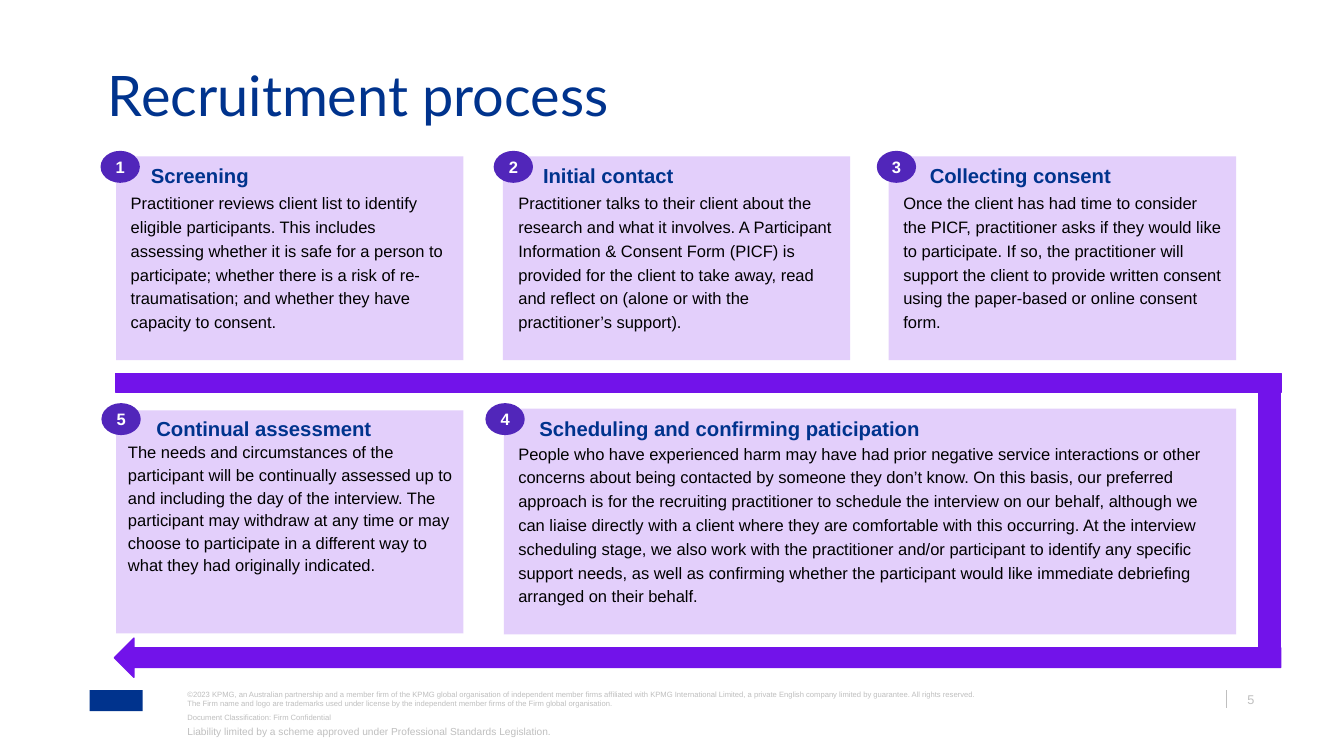
from dataclasses import dataclass

from pptx import Presentation
from pptx.dml.color import RGBColor
from pptx.enum.shapes import MSO_CONNECTOR, MSO_SHAPE
from pptx.enum.text import MSO_ANCHOR, PP_ALIGN
from pptx.oxml.ns import qn
from pptx.util import Inches, Pt
from lxml.etree import SubElement


@dataclass(frozen=True)
class Theme:
    navy: str = "00338D"
    lilac: str = "E3CFFB"
    badge: str = "5126BA"
    arrow: str = "7213EA"
    grey: str = "BFBFBF"
    black: str = "000000"
    white: str = "FFFFFF"
    font: str = "Arial"
    display: str = "Lato"
    title: int = 44
    head: int = 16
    body: int = 13
    page: int = 10
    note: int = 8
    legal: int = 6


@dataclass(frozen=True)
class Card:
    step: str
    head: str
    body: str
    panel: tuple
    badge: tuple
    indent: float
    area: tuple
    leading: float = 1.2


THEME = Theme()
PAD = (0.11, 0.06)

CARDS = [
    Card("2", "Initial contact",
         "Practitioner talks to their client about the research and what it "
         "involves. A Participant Information & Consent Form (PICF) is provided "
         "for the client to take away, read and reflect on (alone or with the "
         "practitioner’s support).",
         (5.5, 1.71, 3.8, 2.23), (5.4, 1.65), 5.83, (5.56, 2.01, 3.72, 1.92)),
    Card("1", "Screening",
         "Practitioner reviews client list to identify eligible participants. "
         "This includes assessing whether it is safe for a person to "
         "participate; whether there is a risk of re-traumatisation; and "
         "whether they have capacity to consent.",
         (1.27, 1.71, 3.8, 2.23), (1.1, 1.65), 1.54, (1.32, 2.01, 3.72, 1.92)),
    Card("3", "Collecting consent",
         "Once the client has had time to consider the PICF, practitioner asks "
         "if they would like to participate. If so, the practitioner will "
         "support the client to provide written consent using the paper-based "
         "or online consent form.",
         (9.72, 1.71, 3.8, 2.23), (9.59, 1.65), 10.06, (9.77, 2.01, 3.72, 1.92)),
    Card("5", "Continual assessment",
         "The needs and circumstances of the participant will be continually "
         "assessed up to and including the day of the interview. The "
         "participant may withdraw at any time or may choose to participate in "
         "a different way to what they had originally indicated.",
         (1.27, 4.49, 3.8, 2.44), (1.11, 4.41), 1.6, (1.29, 4.75, 3.78, 2.09),
         1.14),
    Card("4", "Scheduling and confirming paticipation",
         "People who have experienced harm may have had prior negative service "
         "interactions or other concerns about being contacted by someone they "
         "don’t know. On this basis, our preferred approach is for the "
         "recruiting practitioner to schedule the interview on our behalf, "
         "although we can liaise directly with a client where they are "
         "comfortable with this occurring. At the interview scheduling stage, "
         "we also work with the practitioner and/or participant to identify "
         "any specific support needs, as well as confirming whether the "
         "participant would like immediate debriefing arranged on their behalf.",
         (5.51, 4.47, 8.01, 2.47), (5.31, 4.41), 5.79, (5.56, 4.75, 7.96, 2.19)),
]

LEGAL = [
    "©2023 KPMG, an Australian partnership and a member firm of the KPMG global "
    "organisation of independent member firms affiliated with KPMG International "
    "Limited, a private English company limited by guarantee. All rights reserved.",
    "The Firm name and logo are trademarks used under license by the independent "
    "member firms of the Firm global organisation.",
]


def tint(code):
    return RGBColor.from_string(code)


def fill_text(frame, lines, size, color, font=THEME.font, bold=False,
              align=PP_ALIGN.LEFT, leading=None, pad=(0, 0), wrap=True,
              anchor=MSO_ANCHOR.TOP):
    frame.word_wrap = wrap
    frame.vertical_anchor = anchor
    frame.margin_left = frame.margin_right = Inches(pad[0])
    frame.margin_top = frame.margin_bottom = Inches(pad[1])
    for index, line in enumerate(lines):
        para = frame.add_paragraph() if index else frame.paragraphs[0]
        para.alignment = align
        if leading:
            para.line_spacing = leading
        run = para.add_run()
        run.text = line
        run.font.name = font
        run.font.size = Pt(size)
        run.font.bold = bold
        run.font.color.rgb = tint(color)


def add_text(slide, box, lines, size, color, **style):
    label = slide.shapes.add_textbox(*map(Inches, box))
    fill_text(label.text_frame, lines, size, color, **style)


def add_block(slide, kind, box, color, edge=False):
    block = slide.shapes.add_shape(kind, *map(Inches, box))
    block.shadow.inherit = False
    block.fill.solid()
    block.fill.fore_color.rgb = tint(color)
    if edge:
        block.line.color.rgb = tint(color)
        block.line.width = Pt(1)
    else:
        block.line.fill.background()
    return block


def add_rule(slide, left, top, bottom):
    ends = map(Inches, (left, top, left, bottom))
    rule = slide.shapes.add_connector(MSO_CONNECTOR.STRAIGHT, *ends)
    rule.line.color.rgb = tint(THEME.grey)
    rule.line.width = Pt(0.5)
    SubElement(rule._element.spPr, qn("a:effectLst"))


def add_card(slide, card):
    add_block(slide, MSO_SHAPE.RECTANGLE, card.panel, THEME.lilac)
    left, top = card.badge
    badge = add_block(slide, MSO_SHAPE.OVAL, (left, top, 0.43, 0.35), THEME.badge)
    fill_text(badge.text_frame, [card.step], THEME.body, THEME.white, bold=True,
              align=PP_ALIGN.CENTER, anchor=MSO_ANCHOR.MIDDLE)
    width = card.panel[0] + card.panel[2] - card.indent
    add_text(slide, (card.indent, top + 0.08, width, 0.38), [card.head],
             THEME.head, THEME.navy, bold=True, pad=PAD)
    add_text(slide, card.area, [card.body], THEME.body, THEME.black,
             leading=card.leading, pad=PAD)


def add_route(slide):
    parts = [
        (MSO_SHAPE.RECTANGLE, (1.26, 4.09, 12.76, 0.2)),
        (MSO_SHAPE.RECTANGLE, (13.77, 4.09, 0.24, 3.08)),
        (MSO_SHAPE.LEFT_ARROW, (1.25, 6.98, 12.76, 0.43)),
    ]
    for kind, box in parts:
        add_block(slide, kind, box, THEME.arrow, edge=True)


def add_footer(slide):
    add_block(slide, MSO_SHAPE.RECTANGLE, (0.98, 7.55, 0.58, 0.23), THEME.navy)
    add_rule(slide, 13.41, 7.55, 7.74)
    add_text(slide, (13.43, 7.55, 0.29, 0.18), ["5"], THEME.page, THEME.grey,
             align=PP_ALIGN.RIGHT, anchor=MSO_ANCHOR.BOTTOM)
    add_text(slide, (2.05, 7.55, 10.12, 0.2), LEGAL, THEME.legal, THEME.grey)
    add_text(slide, (2.05, 7.8, 7.45, 0.09),
             ["Document Classification: Firm Confidential"],
             THEME.legal, THEME.grey)
    add_text(slide, (2.05, 7.93, 4.06, 0.13),
             ["Liability limited by a scheme approved under Professional "
              "Standards Legislation."], THEME.note, THEME.grey, wrap=False)


def main():
    deck = Presentation()
    deck.slide_width = Inches(14.7)
    deck.slide_height = Inches(8.27)
    slide = deck.slides.add_slide(deck.slide_layouts[6])
    add_footer(slide)
    add_text(slide, (1.18, 0.86, 12.76, 0.64), ["Recruitment process"],
             THEME.title, THEME.navy, font=THEME.display, leading=0.7)
    for card in CARDS:
        add_card(slide, card)
    add_route(slide)
    deck.save("out.pptx")


if __name__ == "__main__":
    main()
